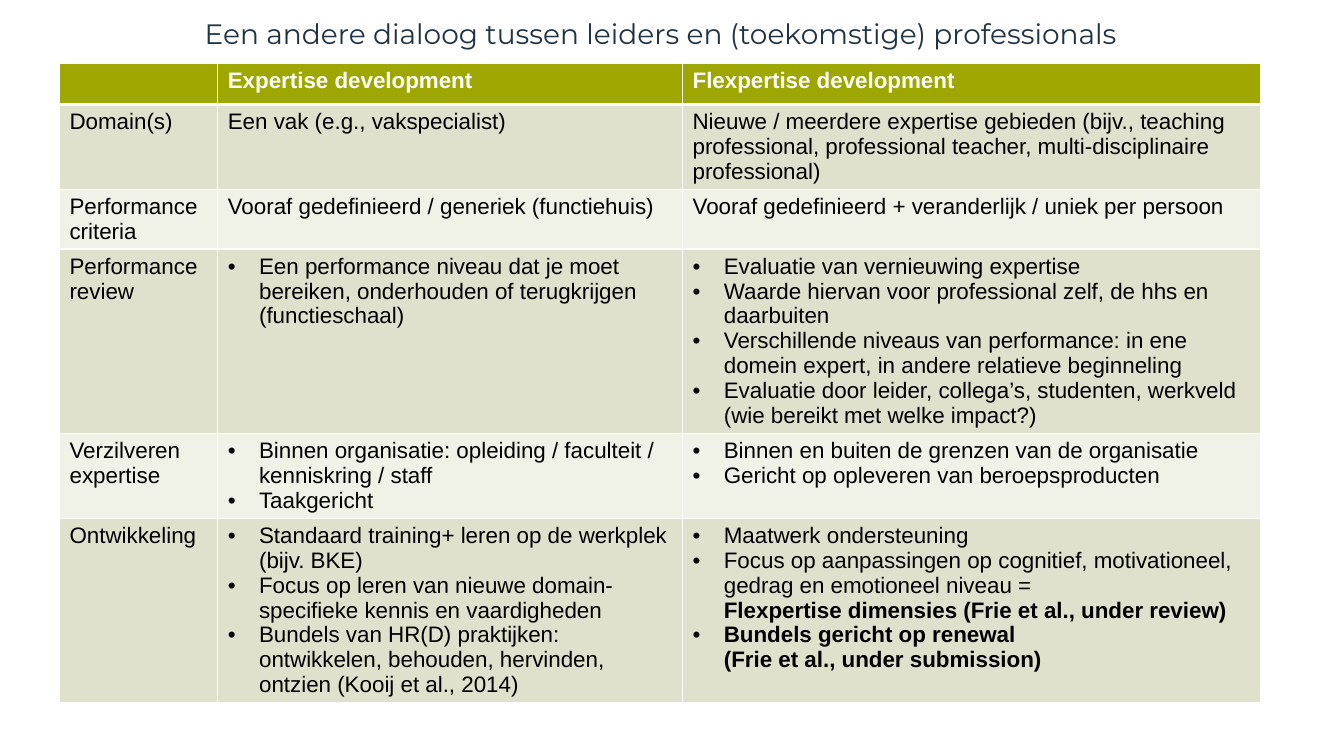
from dataclasses import dataclass

from pptx import Presentation
from pptx.dml.color import RGBColor
from pptx.enum.text import MSO_AUTO_SIZE, PP_ALIGN
from pptx.oxml import parse_xml
from pptx.oxml.ns import nsdecls, qn
from pptx.util import Inches, Pt

WHITE = RGBColor(0xFF, 0xFF, 0xFF)
BLACK = RGBColor(0x00, 0x00, 0x00)
NAVY = RGBColor(0x21, 0x33, 0x43)
OLIVE = RGBColor(0x9E, 0xA7, 0x00)
BANDS = (RGBColor(0xDF, 0xE1, 0xCC), RGBColor(0xF0, 0xF1, 0xE7))

TITLE_FONT = {"name": "Montserrat", "size": Pt(20)}
TABLE_FONT = {"name": "Arial", "size": Pt(16)}
COLUMN_WIDTHS = (1.57, 4.61, 5.73)
BULLET_INDENT = Inches(0.31)


@dataclass(frozen=True)
class Para:
    """A paragraph whose text may be followed by a bold part."""
    text: str = ""
    bold: str = ""
    bullet: bool = False


@dataclass(frozen=True)
class Row:
    height: float
    cells: tuple[tuple[Para, ...], ...]


def plain(text: str) -> tuple[Para, ...]:
    return (Para(text),)


def bullets(*texts: str) -> tuple[Para, ...]:
    return tuple(Para(text, bullet=True) for text in texts)


ROWS = (
    Row(0.39, (plain(""), (Para(bold="Expertise development"),),
               (Para(bold="Flexpertise development"),))),
    Row(0.84, (
        plain("Domain(s)"),
        plain("Een vak (e.g., vakspecialist)"),
        plain("Nieuwe / meerdere expertise gebieden (bijv., teaching professional, "
              "professional teacher, multi-disciplinaire professional)"))),
    Row(0.59, (
        plain("Performance criteria"),
        plain("Vooraf gedefinieerd / generiek (functiehuis)"),
        plain("Vooraf gedefinieerd + veranderlijk / uniek per persoon"))),
    Row(1.83, (
        plain("Performance review"),
        bullets("Een performance niveau dat je moet bereiken, onderhouden of "
                "terugkrijgen (functieschaal)"),
        bullets("Evaluatie van vernieuwing expertise",
                "Waarde hiervan voor professional zelf, de hhs en daarbuiten",
                "Verschillende niveaus van performance: in ene domein expert, "
                "in andere relatieve beginneling",
                "Evaluatie door leider, collega’s, studenten, werkveld "
                "(wie bereikt met welke impact?)"))),
    Row(0.84, (
        plain("Verzilveren expertise"),
        bullets("Binnen organisatie: opleiding / faculteit / kenniskring / staff",
                "Taakgericht"),
        bullets("Binnen en buiten de grenzen van de organisatie",
                "Gericht op opleveren van beroepsproducten"))),
    Row(1.83, (
        plain("Ontwikkeling"),
        bullets("Standaard training+ leren op de werkplek (bijv. BKE)",
                "Focus op leren van nieuwe domain-specifieke kennis en vaardigheden",
                "Bundels van HR(D) praktijken: ontwikkelen, behouden, hervinden, "
                "ontzien (Kooij et al., 2014)"),
        (*bullets("Maatwerk ondersteuning"),
         Para("Focus op aanpassingen op cognitief, motivationeel, gedrag en "
              "emotioneel niveau =\n",
              "Flexpertise dimensies (Frie et al., under review)", True),
         Para("", "Bundels gericht op renewal\n(Frie et al., under submission)", True)))),
)


def add_run(p, text: str, font: dict, color: RGBColor, bold: bool = False) -> None:
    r = p.add_run()
    r.text = text
    for name, value in {**font, "bold": bold}.items():
        setattr(r.font, name, value)
    r.font.color.rgb = color


def add_break(p) -> None:
    """Add a line break as tall as the table text."""
    p.add_line_break()
    size = int(TABLE_FONT["size"].pt * 100)
    br = p._p.findall(qn("a:br"))[-1]
    br.append(parse_xml(f'<a:rPr {nsdecls("a")} sz="{size}"/>'))


def set_bullet(p) -> None:
    pPr = p._p.get_or_add_pPr()
    pPr.set("marL", str(BULLET_INDENT))
    pPr.set("indent", str(-BULLET_INDENT))
    pPr.append(parse_xml(f'<a:buFont {nsdecls("a")} typeface="Arial"/>'))
    pPr.append(parse_xml(f'<a:buChar {nsdecls("a")} char="•"/>'))


def fill_paragraph(p, para: Para, color: RGBColor) -> None:
    if para.bullet:
        set_bullet(p)
    for text, bold in ((para.text, False), (para.bold, True)):
        for i, line in enumerate(text.split("\n")):
            if i:
                add_break(p)
            if line:
                add_run(p, line, TABLE_FONT, color, bold)


def set_borders(cell, top: float, bottom: float) -> None:
    tcPr = cell._tc.get_or_add_tcPr()
    for side, width in {"L": 1, "R": 1, "T": top, "B": bottom}.items():
        tcPr.append(parse_xml(
            f'<a:ln{side} {nsdecls("a")} w="{Pt(width)}"><a:solidFill>'
            f'<a:srgbClr val="{WHITE}"/></a:solidFill></a:ln{side}>'))


def add_title(slide) -> None:
    sp = slide.shapes.add_textbox(Inches(1.42), Inches(0.11), Inches(10.27), Inches(0.44))
    tf = sp.text_frame
    tf.word_wrap = False
    tf.auto_size = MSO_AUTO_SIZE.SHAPE_TO_FIT_TEXT
    p = tf.paragraphs[0]
    p.alignment = PP_ALIGN.CENTER
    add_run(p, "Een andere dialoog tussen leiders en (toekomstige) professionals",
            TITLE_FONT, NAVY)


def add_comparison(slide) -> None:
    table = slide.shapes.add_table(
        len(ROWS), len(COLUMN_WIDTHS), Inches(0.59), Inches(0.63),
        Inches(sum(COLUMN_WIDTHS)), Inches(sum(row.height for row in ROWS))).table
    table.horz_banding = False
    for column, width in zip(table.columns, COLUMN_WIDTHS):
        column.width = Inches(width)
    for i, row in enumerate(ROWS):
        table.rows[i].height = Inches(row.height)
        header = i == 0
        for j, paras in enumerate(row.cells):
            cell = table.cell(i, j)
            set_borders(cell, top=3 if i == 1 else 1, bottom=3 if header else 1)
            cell.fill.solid()
            cell.fill.fore_color.rgb = OLIVE if header else BANDS[(i - 1) % 2]
            tf = cell.text_frame
            for k, para in enumerate(paras):
                p = tf.add_paragraph() if k else tf.paragraphs[0]
                fill_paragraph(p, para, WHITE if header else BLACK)


def main() -> None:
    prs = Presentation()
    prs.slide_width, prs.slide_height = Inches(13.33), Inches(7.5)
    slide = prs.slides.add_slide(prs.slide_layouts[6])
    add_comparison(slide)
    add_title(slide)
    prs.save("out.pptx")


if __name__ == "__main__":
    main()
